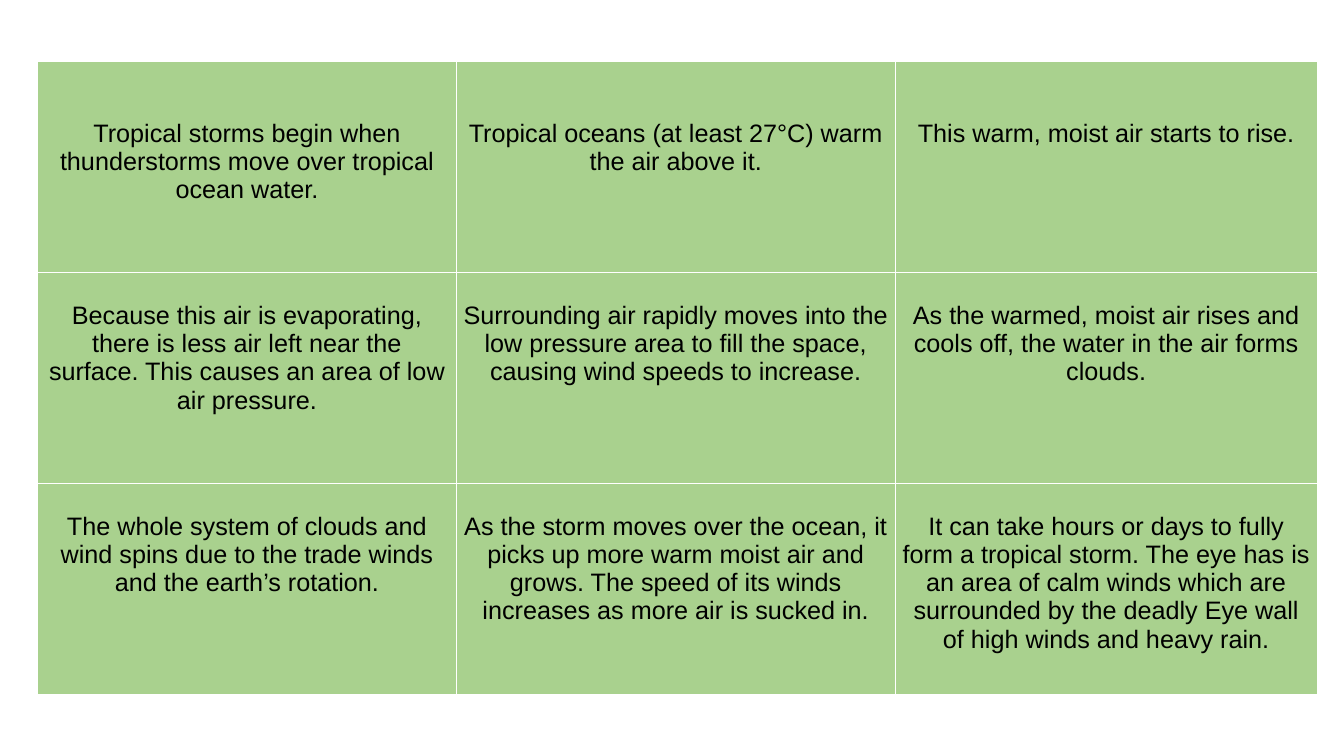
from dataclasses import dataclass

import pptx
import pptx.dml.color
import pptx.enum.text
import pptx.oxml
import pptx.oxml.ns
import pptx.util

Pt = pptx.util.Pt
RGBColor = pptx.dml.color.RGBColor


@dataclass(frozen=True)
class Theme:
    font: str = "Arial"
    size: float = 18
    text: str = "000000"
    cell: str = "A9D18E"
    border: str = "FFFFFF"
    border_width: float = 1


THEME = Theme()
BLANK_LAYOUT = 6
TABLE_LEFT, TABLE_TOP = 26.9, 44.2
COLUMN_WIDTHS = (299, 313.5, 301.5)
ROW_HEIGHT = 150.7
SIDE_MARGIN = 5
LINE_HEIGHT = 20.5
LINES_ABOVE_TEXT = (2, 1, 1)

STORM_STEPS = (
    (
        "Tropical storms begin when thunderstorms move over tropical ocean water.",
        "Tropical oceans (at least 27°C) warm the air above it.",
        "This warm, moist air starts to rise.",
    ),
    (
        "Because this air is evaporating, there is less air left near the surface. "
        "This causes an area of low air pressure.",
        "Surrounding air rapidly moves into the low pressure area to fill the space, "
        "causing wind speeds to increase.",
        "As the warmed, moist air rises and cools off, the water in the air forms clouds.",
    ),
    (
        "The whole system of clouds and wind spins due to the trade winds "
        "and the earth’s rotation.",
        "As the storm moves over the ocean, it picks up more warm moist air and grows. "
        "The speed of its winds increases as more air is sucked in.",
        "It can take hours or days to fully form a tropical storm. "
        "The eye has is an area of calm winds which are surrounded by "
        "the deadly Eye wall of high winds and heavy rain.",
    ),
)


def set_borders(cell):
    """Draw all four sides; the lines must precede the fill in the cell's XML."""
    properties = cell._tc.get_or_add_tcPr()
    for position, side in enumerate(("lnL", "lnR", "lnT", "lnB")):
        line = pptx.oxml.parse_xml(
            f'<a:{side} {pptx.oxml.ns.nsdecls("a")} w="{Pt(THEME.border_width)}">'
            f'<a:solidFill><a:srgbClr val="{THEME.border}"/></a:solidFill></a:{side}>'
        )
        properties.insert(position, line)


def fill_cell(cell, step, margin_top):
    cell.margin_left = cell.margin_right = Pt(SIDE_MARGIN)
    cell.margin_top, cell.margin_bottom = Pt(margin_top), 0
    cell.fill.solid()
    cell.fill.fore_color.rgb = RGBColor.from_string(THEME.cell)
    set_borders(cell)

    cell.text = step
    paragraph = cell.text_frame.paragraphs[0]
    paragraph.alignment = pptx.enum.text.PP_ALIGN.CENTER
    paragraph.font.name = THEME.font
    paragraph.font.size = Pt(THEME.size)
    paragraph.font.color.rgb = RGBColor.from_string(THEME.text)


def add_step_table(slide):
    rows, columns = len(STORM_STEPS), len(COLUMN_WIDTHS)
    table = slide.shapes.add_table(
        rows, columns, Pt(TABLE_LEFT), Pt(TABLE_TOP),
        Pt(sum(COLUMN_WIDTHS)), Pt(rows * ROW_HEIGHT),
    ).table
    table.first_row = table.horz_banding = False
    for column, width in zip(table.columns, COLUMN_WIDTHS):
        column.width = Pt(width)
    for row, steps, lines in zip(table.rows, STORM_STEPS, LINES_ABOVE_TEXT):
        row.height = Pt(ROW_HEIGHT)
        for cell, step in zip(row.cells, steps):
            fill_cell(cell, step, lines * LINE_HEIGHT)


def main():
    presentation = pptx.Presentation()
    presentation.slide_width, presentation.slide_height = Pt(960), Pt(540)
    slide = presentation.slides.add_slide(presentation.slide_layouts[BLANK_LAYOUT])
    add_step_table(slide)
    presentation.save("out.pptx")


if __name__ == "__main__":
    main()
